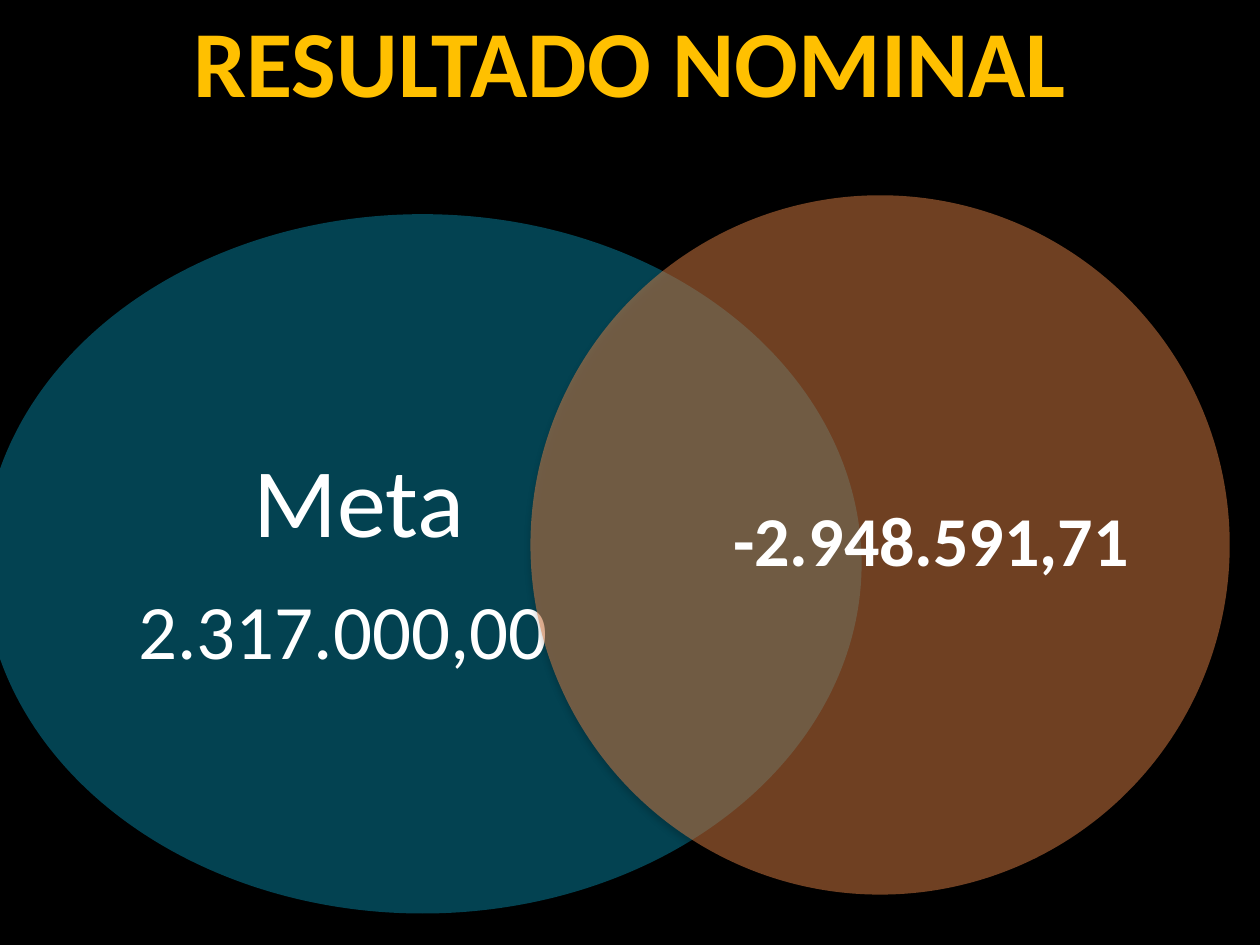
from dataclasses import dataclass

from lxml import etree
from pptx import Presentation
from pptx.dml.color import RGBColor
from pptx.enum import shapes, text
from pptx.oxml.ns import qn
from pptx.util import Pt


@dataclass(frozen=True)
class Theme:
    font: str = "Calibri"
    background: str = "000000"
    title: str = "FFC000"
    label: str = "FFFFFF"
    goal: str = "0684A2"
    result: str = "DF8045"
    title_size: int = 54
    heading_size: int = 56
    goal_size: int = 44
    result_size: int = 40


THEME = Theme()

# Boxes are left, top, width, height in points
TITLE = "RESULTADO NOMINAL"
TITLE_BOX = (100.8, -2.2, 518.4, 72.7)
CIRCLES = [
    {"color": THEME.goal, "oval": (-9.4, 122.4, 501.8, 399.6),
     "label": (60.5, 169.9, 289.4, 305.3), "bold": False,
     "lines": [("Meta", THEME.heading_size),
               ("2.317.000,00\t", THEME.goal_size)]},
    {"color": THEME.result, "oval": (303.1, 111.6, 399.6, 399.6),
     "label": (416.9, 158.4, 230.4, 305.3), "bold": True,
     "lines": [("-2.948.591,71", THEME.result_size)]},
]


def points(box):
    return [Pt(length) for length in box]


def write(paragraph, words, size, color, bold):
    paragraph.alignment = text.PP_ALIGN.CENTER
    run = paragraph.add_run()
    run.text = words
    run.font.name = THEME.font
    run.font.size = Pt(size)
    run.font.bold = bold
    run.font.color.rgb = RGBColor.from_string(color)


def add_alpha(color_element, percent):
    etree.SubElement(color_element, qn("a:alpha"), val=str(percent * 1000))


def add_oval(group, box, color):
    """Half-transparent oval with a soft shadow below it."""
    oval = group.shapes.add_shape(shapes.MSO_SHAPE.OVAL, *points(box))
    oval.fill.solid()
    oval.fill.fore_color.rgb = RGBColor.from_string(color)
    oval.line.fill.background()
    oval.shadow.inherit = False
    properties = oval._element.spPr
    add_alpha(properties.find(qn("a:solidFill")).find(qn("a:srgbClr")), 50)
    shadow = etree.SubElement(
        properties.find(qn("a:effectLst")), qn("a:outerShdw"),
        blurRad=str(Pt(4)), dist=str(Pt(3)), dir="5400000", rotWithShape="0")
    add_alpha(etree.SubElement(shadow, qn("a:srgbClr"), val="000000"), 35)


def add_label(group, box, lines, bold):
    frame = group.shapes.add_textbox(*points(box)).text_frame
    frame.word_wrap = True
    frame.vertical_anchor = text.MSO_ANCHOR.MIDDLE
    frame.margin_left = frame.margin_right = 0
    frame.margin_top = frame.margin_bottom = 0
    for index, (words, size) in enumerate(lines):
        paragraph = frame.add_paragraph() if index else frame.paragraphs[0]
        paragraph.line_spacing = 0.9
        paragraph.space_after = Pt(round(0.35 * size, 1))
        write(paragraph, words, size, THEME.label, bold)


def main():
    deck = Presentation()
    deck.slide_width, deck.slide_height = Pt(720), Pt(540)
    slide = deck.slides.add_slide(deck.slide_layouts[5])
    slide.background.fill.solid()
    slide.background.fill.fore_color.rgb = RGBColor.from_string(THEME.background)

    title = slide.shapes.title
    title.left, title.top, title.width, title.height = points(TITLE_BOX)
    title.text_frame.word_wrap = False
    title.text_frame.auto_size = text.MSO_AUTO_SIZE.SHAPE_TO_FIT_TEXT
    write(title.text_frame.paragraphs[0], TITLE, THEME.title_size, THEME.title, True)

    venn = slide.shapes.add_group_shape()
    for circle in CIRCLES:
        add_oval(venn, circle["oval"], circle["color"])
        add_label(venn, circle["label"], circle["lines"], circle["bold"])

    deck.save("out.pptx")


if __name__ == "__main__":
    main()
